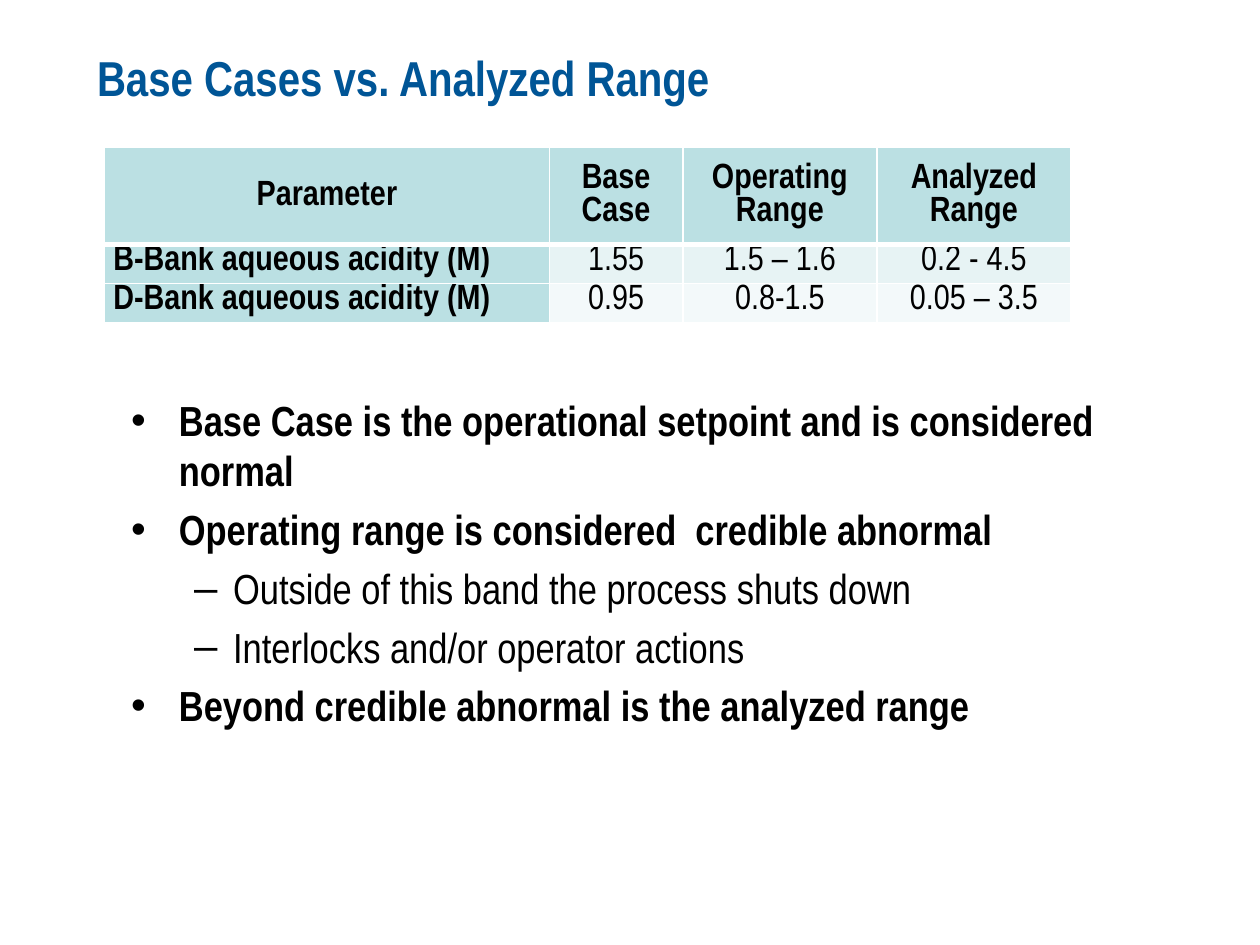
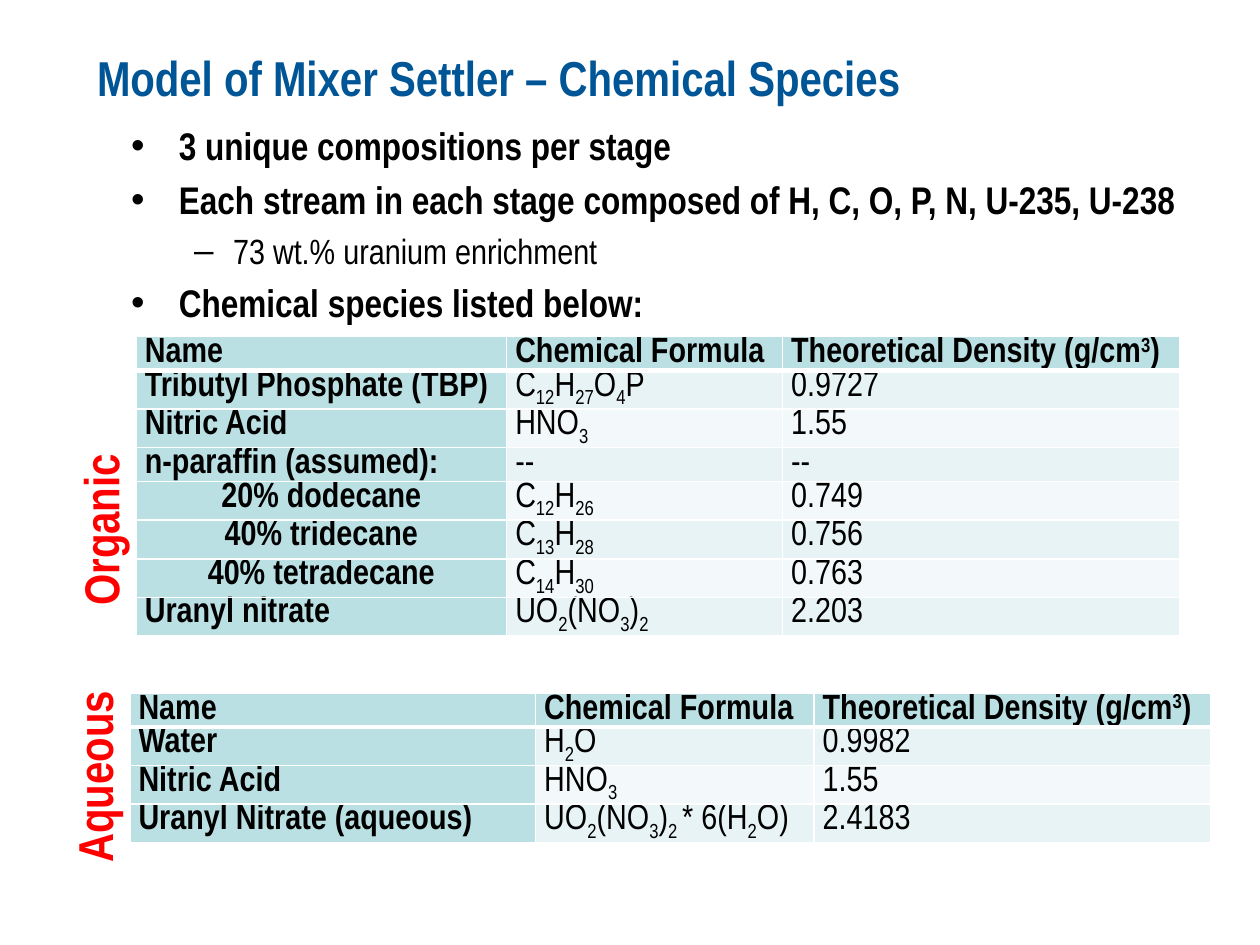
from lxml import etree
from pptx import Presentation
from pptx.dml.color import RGBColor
from pptx.enum.text import MSO_ANCHOR as Anchor, MSO_AUTO_SIZE as AutoSize, PP_ALIGN as Align
from pptx.oxml.ns import qn
from pptx.util import Inches, Pt

COLORS = {
    "title": "005596",
    "text": "000000",
    "phase": "FF0000",
    "label": "BBE0E3",
    "odd_band": "E7F3F4",
    "even_band": "F3F9FA",
    "rule": "FFFFFF",
}
FONT = "Arial Narrow"
BULLETS = [("•", 0.38, -0.38), ("–", 0.81, -0.31)]


class Deck:
    def __init__(self):
        self.prs = Presentation()
        self.prs.slide_width, self.prs.slide_height = Inches(10), Inches(7.5)
        self.slide = None

    def style(self, run, size, color="text", bold=True):
        run.font.name = FONT
        run.font.size = Pt(size)
        run.font.bold = bold
        run.font.color.rgb = RGBColor.from_string(COLORS[color])

    def place(self, shape, left, top, width, height):
        shape.left, shape.top = Inches(left), Inches(top)
        shape.width, shape.height = Inches(width), Inches(height)

    def new_slide(self, heading):
        self.slide = self.prs.slides.add_slide(self.prs.slide_layouts[1])
        title = self.slide.shapes.title
        self.place(title, 0.67, 0.33, 8.83, 0.67)
        frame = title.text_frame
        frame.text = heading
        frame.auto_size = AutoSize.NONE
        frame.vertical_anchor = Anchor.TOP
        frame.paragraphs[0].alignment = Align.LEFT
        self.style(frame.paragraphs[0].runs[0], 28, "title")

    def bullets(self, top, height, sizes, points):
        body = self.slide.placeholders[1]
        self.place(body, 0.94, top, 8.73, height)
        frame = body.text_frame
        frame.text = "\n".join(text for _, text in points)
        frame.auto_size = AutoSize.NONE
        for index, (paragraph, (level, _)) in enumerate(zip(frame.paragraphs, points)):
            mark, margin, indent = BULLETS[level]
            paragraph.level = level
            props = paragraph._p.get_or_add_pPr()
            props.set("marL", str(Inches(margin)))
            props.set("indent", str(Inches(indent)))
            etree.SubElement(props, qn("a:buFont"), typeface="Arial")
            etree.SubElement(props, qn("a:buChar"), char=mark)
            paragraph.space_before = Pt(0.2 * sizes[level] if index else 0)
            self.style(paragraph.runs[0], sizes[level], bold=level == 0)

    def borders(self, cell, row):
        props = cell._tc.get_or_add_tcPr()
        widths = {"L": 1, "R": 1, "T": 3 if row == 1 else 1, "B": 3 if row == 0 else 1}
        for side, width in widths.items():
            line = etree.SubElement(props, qn(f"a:ln{side}"), w=str(Pt(width)))
            fill = etree.SubElement(line, qn("a:solidFill"))
            etree.SubElement(fill, qn("a:srgbClr"), val=COLORS["rule"])

    def cell(self, cell, text, row, col, centered):
        self.borders(cell, row)
        band = "label" if row == 0 or col == 0 else "odd_band" if row % 2 else "even_band"
        cell.fill.solid()
        cell.fill.fore_color.rgb = RGBColor.from_string(COLORS[band])
        cell.margin_left = cell.margin_right = Inches(0.07)
        cell.margin_top = cell.margin_bottom = 0
        cell.vertical_anchor = Anchor.TOP if row else Anchor.MIDDLE
        paragraph = cell.text_frame.paragraphs[0]
        paragraph.alignment = Align.CENTER if centered else Align.LEFT
        for index, piece in enumerate(text.split("_")):
            if piece:
                run = paragraph.add_run()
                run.text = piece
                self.style(run, 20, bold=band == "label")
                if index % 2:
                    run._r.get_or_add_rPr().set("baseline", "-25000" if row else "30000")

    def table(self, left, top, widths, heights, rows, is_centered):
        grid = self.slide.shapes.add_table(
            len(rows), len(widths), Inches(left), Inches(top),
            Inches(sum(widths)), Inches(sum(heights))).table
        for column, width in zip(grid.columns, widths):
            column.width = Inches(width)
        for row, (height, texts) in enumerate(zip(heights, rows)):
            grid.rows[row].height = Inches(height)
            for col, text in enumerate(texts):
                self.cell(grid.cell(row, col), text, row, col, is_centered(row, col, text))

    def species_table(self, left, top, widths, species):
        rows = [("Name", "Chemical Formula", "Theoretical Density (g/cm_3_)")] + species
        heights = [0.3 if "_" in formula else 0.27 for _, formula, _ in rows]
        self.table(left, top, widths, heights, rows,
                   lambda row, col, text: col == 0 and "%" in text)

    def phase_label(self, left, top, phase):
        box = self.slide.shapes.add_textbox(
            Inches(left), Inches(top), Inches(0.67), Inches(2.25))
        frame = box.text_frame
        frame.text = phase
        frame.word_wrap = True
        frame.auto_size = AutoSize.SHAPE_TO_FIT_TEXT
        frame._txBody.bodyPr.set("vert", "vert270")
        frame.paragraphs[0].alignment = Align.CENTER
        self.style(frame.paragraphs[0].runs[0], 28, "phase")


def main():
    deck = Deck()

    deck.new_slide("Base Cases vs. Analyzed Range")
    deck.bullets(3.08, 3.08, (24, 24), [
        (0, "Base Case is the operational setpoint and is considered normal"),
        (0, "Operating range is considered  credible abnormal"),
        (1, "Outside of this band the process shuts down"),
        (1, "Interlocks and/or operator actions"),
        (0, "Beyond credible abnormal is the analyzed range"),
    ])
    deck.table(0.83, 1.17, (3.53, 1.06, 1.54, 1.54), (0.77, 0.31, 0.31), [
        ("Parameter", "Base Case", "Operating Range", "Analyzed Range"),
        ("B-Bank aqueous acidity (M)", "1.55", "1.5 – 1.6", "0.2 - 4.5"),
        ("D-Bank aqueous acidity (M)", "0.95", "0.8-1.5", "0.05 – 3.5"),
    ], lambda row, col, text: row == 0 or col > 0)

    deck.new_slide("Model of Mixer Settler – Chemical Species")
    deck.bullets(0.92, 5.03, (22, 20), [
        (0, "3 unique compositions per stage"),
        (0, "Each stream in each stage composed of H, C, O, P, N, U-235, U-238"),
        (1, "73 wt.% uranium enrichment"),
        (0, "Chemical species listed below:"),
    ])
    deck.species_table(1.08, 2.67, (2.94, 2.19, 3.15), [
        ("Tributyl Phosphate (TBP)", "C_12_H_27_O_4_P", "0.9727"),
        ("Nitric Acid", "HNO_3_", "1.55"),
        ("n-paraffin (assumed):", "--", "--"),
        ("20% dodecane", "C_12_H_26_", "0.749"),
        ("40% tridecane", "C_13_H_28_", "0.756"),
        ("40% tetradecane", "C_14_H_30_", "0.763"),
        ("Uranyl nitrate", "UO_2_(NO_3_)_2_", "2.203"),
    ])
    deck.species_table(1.03, 5.5, (3.22, 2.21, 3.15), [
        ("Water", "H_2_O", "0.9982"),
        ("Nitric Acid", "HNO_3_", "1.55"),
        ("Uranyl Nitrate (aqueous)", "UO_2_(NO_3_)_2 _* 6(H_2_O)", "2.4183"),
    ])
    deck.phase_label(0.46, 5.04, "Aqueous")
    deck.phase_label(0.51, 3.08, "Organic")

    deck.prs.save("out.pptx")


if __name__ == "__main__":
    main()
